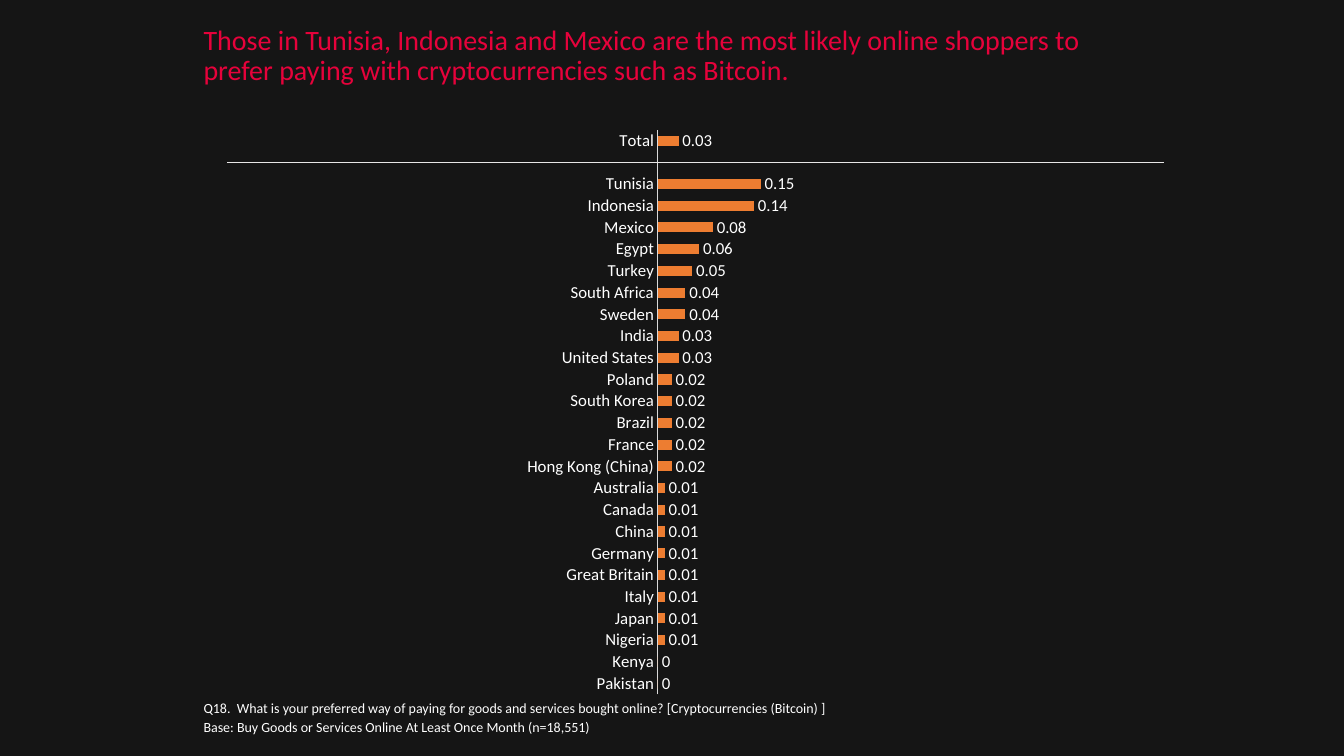
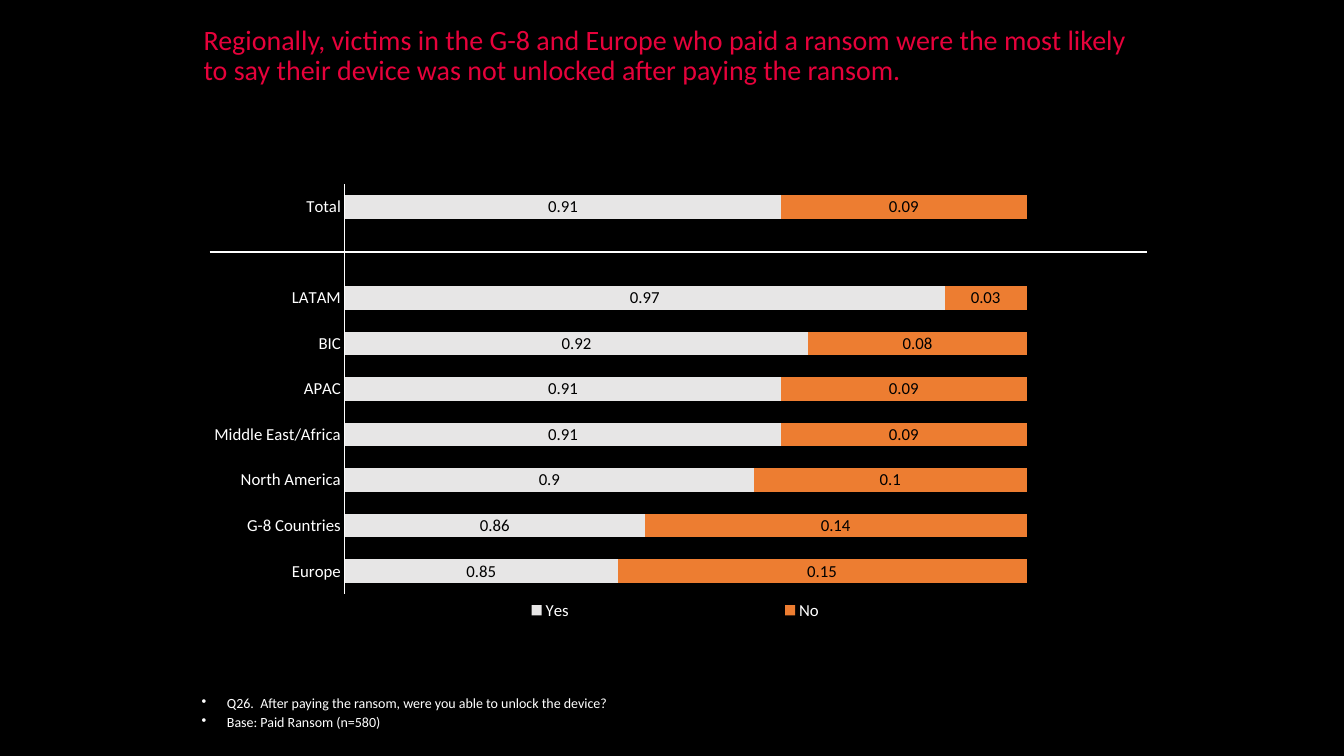
from dataclasses import dataclass

from pptx import Presentation
from pptx import util as u
from pptx.chart import data as chart_data
from pptx.dml.color import RGBColor
from pptx.enum import chart as ce
from pptx.enum import shapes, text
from pptx.oxml import parse_xml
from pptx.oxml.ns import nsdecls


@dataclass(frozen=True)
class Theme:
    font: str = "Calibri"
    heading: str = "E6023B"
    light: str = "FFFFFF"
    dark: str = "000000"
    charcoal: str = "151515"
    pale: str = "E7E6E6"
    axis_grey: str = "D9D9D9"
    orange: str = "ED7D31"
    title_size: int = 20
    chart_size: int = 12
    note_size: int = 10


@dataclass(frozen=True)
class Box:
    left: float
    top: float
    width: float
    height: float

    def lengths(self):
        return [u.Cm(v) for v in (self.left, self.top, self.width, self.height)]

    def fractions_of(self, outer):
        return {
            "x": (self.left - outer.left) / outer.width,
            "y": (self.top - outer.top) / outer.height,
            "w": self.width / outer.width,
            "h": self.height / outer.height,
        }


THEME = Theme()
TITLE_BOX = Box(4.88, 0.64, 24.03, 1.55)
RULE_WIDTH = 23.62


def rgb(value):
    return RGBColor.from_string(value)


def style_font(font, size, color):
    font.name = THEME.font
    font.size = u.Pt(size)
    font.color.rgb = rgb(color)


def add_text(slide, box, lines, size, color, anchor, line_spacing, space_before=0):
    frame = slide.shapes.add_textbox(*box.lengths()).text_frame
    frame.word_wrap = True
    frame.vertical_anchor = anchor
    frame.text = "\n".join(lines)
    for paragraph in frame.paragraphs:
        paragraph.line_spacing = line_spacing
        paragraph.space_before = u.Pt(space_before)
        for run in paragraph.runs:
            style_font(run.font, size, color)
    return frame


def add_title(slide, box, title):
    add_text(slide, box, [title], THEME.title_size, THEME.heading,
             text.MSO_ANCHOR.MIDDLE, 0.9)


def add_source_note(slide, box, lines, bulleted=False):
    note = add_text(slide, box, lines, THEME.note_size, THEME.light,
                    text.MSO_ANCHOR.BOTTOM, 0.95, 2)
    if bulleted:
        indent = u.Cm(0.64)
        for paragraph in note.paragraphs:
            properties = paragraph._p.get_or_add_pPr()
            properties.set("marL", str(indent))
            properties.set("indent", str(-indent))
            properties.append(parse_xml(f'<a:buChar {nsdecls("a")} char="•"/>'))


def add_rule(slide, left, top, color):
    rule = slide.shapes.add_connector(
        shapes.MSO_CONNECTOR.STRAIGHT,
        u.Cm(left), u.Cm(top), u.Cm(left + RULE_WIDTH), u.Cm(top))
    rule.line.color.rgb = rgb(color)
    rule.line.width = u.Pt(1)
    rule._element.spPr.append(parse_xml(f'<a:effectLst {nsdecls("a")}/>'))


def manual_layout(box, outer, inner=False):
    target = '<c:layoutTarget val="inner"/>' if inner else ""
    places = box.fractions_of(outer)
    modes = "".join(f'<c:{axis}Mode val="edge"/>' for axis in "xy")
    values = "".join(f'<c:{key} val="{value:.4f}"/>' for key, value in places.items())
    return parse_xml(
        f'<c:layout {nsdecls("c")}><c:manualLayout>{target}{modes}{values}'
        "</c:manualLayout></c:layout>")


def add_legend(chart, box, outer):
    chart.has_legend = True
    legend = chart.legend
    legend.position = ce.XL_LEGEND_POSITION.BOTTOM
    legend.include_in_layout = False
    style_font(legend.font, THEME.chart_size, THEME.light)
    element = chart.element.xpath(".//c:legend")[0]
    for old in element.xpath("./c:layout"):
        element.remove(old)
    element.xpath("./c:legendPos")[0].addnext(manual_layout(box, outer))


def add_bar_chart(slide, box, plot_box, kind, categories, series, gap, label_color,
                  label_position, axis_color, minimum=0, legend_box=None):
    content = chart_data.CategoryChartData()
    content.categories = categories
    for name, values, _ in series:
        content.add_series(name, values)
    chart = slide.shapes.add_chart(kind, *box.lengths(), content).chart
    chart.has_title = False
    chart.has_legend = False
    style_font(chart.font, THEME.note_size, THEME.light)

    category_axis = chart.category_axis
    category_axis.reverse_order = True
    category_axis.major_tick_mark = ce.XL_TICK_MARK.NONE
    category_axis.minor_tick_mark = ce.XL_TICK_MARK.NONE
    category_axis.format.line.color.rgb = rgb(axis_color)
    category_axis.format.line.width = u.Pt(0.75)
    style_font(category_axis.tick_labels.font, THEME.chart_size, THEME.light)

    value_axis = chart.value_axis
    value_axis.minimum_scale = minimum
    value_axis.maximum_scale = 1
    value_axis.has_major_gridlines = False
    value_axis.visible = False

    plot = chart.plots[0]
    plot.vary_by_categories = False
    plot.gap_width = gap
    if kind == ce.XL_CHART_TYPE.BAR_STACKED:
        plot.overlap = 100
    for bars, (_, _, color) in zip(plot.series, series):
        bars.invert_if_negative = False
        bars.format.fill.solid()
        bars.format.fill.fore_color.rgb = rgb(color)
        labels = bars.data_labels
        labels.show_value = True
        labels.number_format = "General"
        labels.number_format_is_linked = False
        labels.position = label_position
        style_font(labels.font, THEME.chart_size, label_color)

    plot_area = chart.element.xpath(".//c:plotArea")[0]
    for old in plot_area.xpath("./c:layout"):
        plot_area.remove(old)
    plot_area.insert(0, manual_layout(plot_box, box, inner=True))
    if legend_box:
        add_legend(chart, legend_box, box)


def add_slide(deck, background, title):
    slide = deck.slides.add_slide(deck.slide_layouts[6])
    slide.background.fill.solid()
    slide.background.fill.fore_color.rgb = rgb(background)
    add_title(slide, TITLE_BOX, title)
    return slide


def build_cryptocurrency_slide(deck):
    slide = add_slide(
        deck, THEME.charcoal,
        "Those in Tunisia, Indonesia and Mexico are the most likely online shoppers "
        "to prefer paying with cryptocurrencies such as Bitcoin.")
    preference = [
        ("Total", 0.03), ("", None), ("Tunisia", 0.15), ("Indonesia", 0.14),
        ("Mexico", 0.08), ("Egypt", 0.06), ("Turkey", 0.05), ("South Africa", 0.04),
        ("Sweden", 0.04), ("India", 0.03), ("United States", 0.03), ("Poland", 0.02),
        ("South Korea", 0.02), ("Brazil", 0.02), ("France", 0.02),
        ("Hong Kong (China)", 0.02), ("Australia", 0.01), ("Canada", 0.01),
        ("China", 0.01), ("Germany", 0.01), ("Great Britain", 0.01), ("Italy", 0.01),
        ("Japan", 0.01), ("Nigeria", 0.01), ("Kenya", 0), ("Pakistan", 0),
    ]
    countries, shares = zip(*preference)
    add_bar_chart(
        slide, Box(12.7, 2.74, 21.16, 15.01), Box(16.58, 3.27, 17.28, 14.23),
        ce.XL_CHART_TYPE.BAR_CLUSTERED, countries,
        [("Series 1", shares, THEME.orange)], 115, THEME.light,
        ce.XL_LABEL_POSITION.OUTSIDE_END, THEME.axis_grey)
    add_rule(slide, 5.72, 4.09, THEME.pale)
    add_source_note(slide, Box(4.88, 17.53, 20.17, 1.14), [
        "Q18.  What is your preferred way of paying for goods and services bought "
        "online? [Cryptocurrencies (Bitcoin) ]",
        "Base: Buy Goods or Services Online At Least Once Month (n=18,551)"])


def build_ransom_slide(deck):
    slide = add_slide(
        deck, THEME.dark,
        "Regionally, victims in the G-8 and Europe who paid a ransom were the most "
        "likely to say their device was not unlocked after paying the ransom.")
    unlocked = [
        ("Total", 0.91, 0.09), ("", None, None), ("LATAM", 0.97, 0.03),
        ("BIC", 0.92, 0.08), ("APAC", 0.91, 0.09), ("Middle East/Africa", 0.91, 0.09),
        ("North America", 0.9, 0.1), ("G-8 Countries", 0.86, 0.14),
        ("Europe", 0.85, 0.15),
    ]
    regions, yes, no = zip(*unlocked)
    add_bar_chart(
        slide, Box(4.98, 4.39, 21.34, 11.68), Box(8.69, 4.64, 17.18, 10.33),
        ce.XL_CHART_TYPE.BAR_STACKED, regions,
        [("Yes", yes, THEME.pale), ("No", no, THEME.orange)], 94, THEME.dark,
        ce.XL_LABEL_POSITION.CENTER, THEME.light, minimum=0.75,
        legend_box=Box(8.09, 14.97, 17.86, 0.82))
    add_rule(slide, 5.28, 6.35, THEME.light)
    add_source_note(slide, Box(4.83, 17.4, 20.17, 1.14), [
        "Q26.  After paying the ransom, were you able to unlock the device?",
        "Base: Paid Ransom (n=580)"], bulleted=True)


def main():
    deck = Presentation()
    deck.slide_width = u.Cm(33.87)
    deck.slide_height = u.Cm(19.05)
    build_cryptocurrency_slide(deck)
    build_ransom_slide(deck)
    deck.save("out.pptx")


if __name__ == "__main__":
    main()
